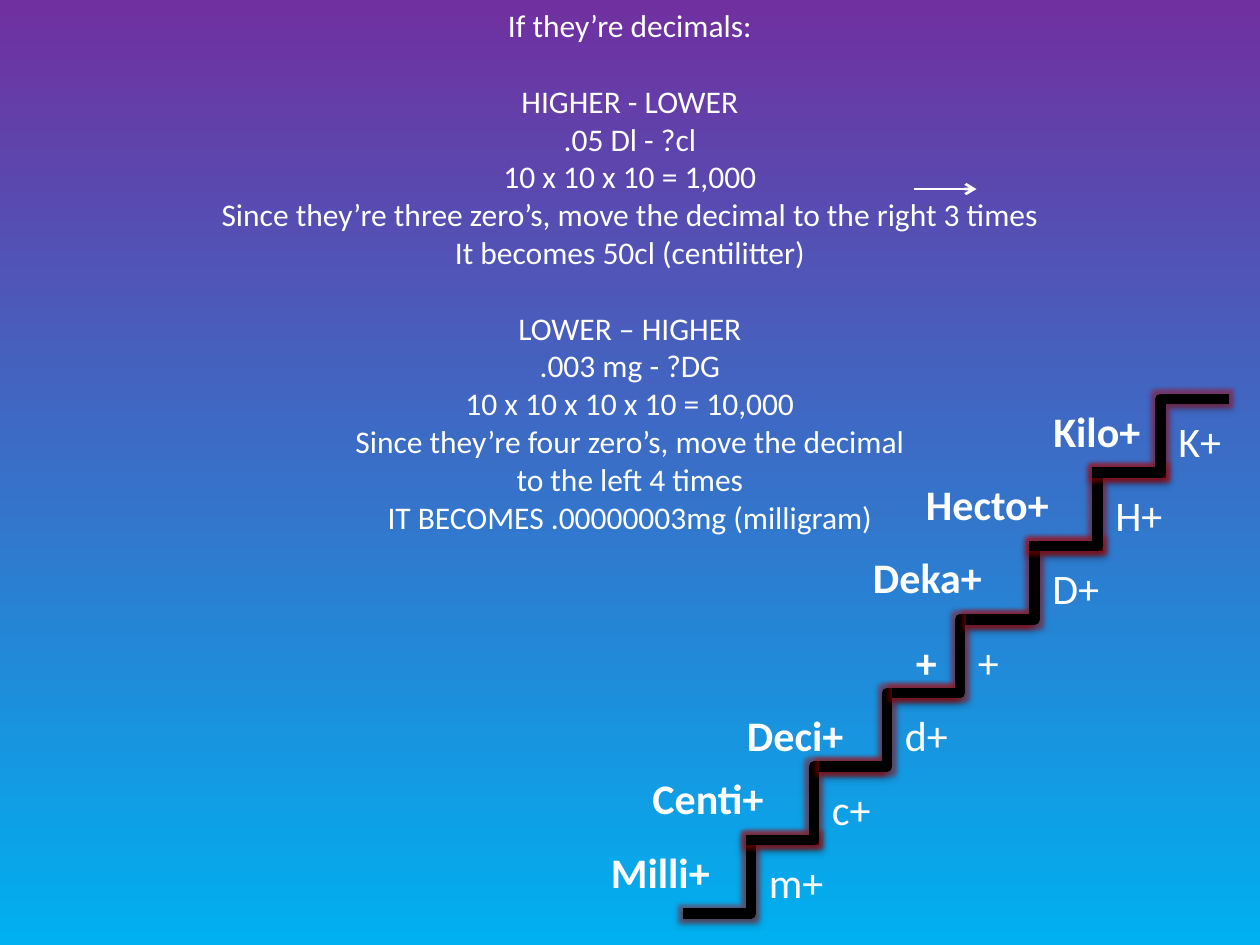
from dataclasses import dataclass

from lxml.etree import SubElement
from pptx import Presentation
from pptx.dml.color import RGBColor
from pptx.enum.shapes import MSO_CONNECTOR
from pptx.enum.text import MSO_AUTO_SIZE, PP_ALIGN
from pptx.oxml.ns import qn
from pptx.shapes.connector import Connector
from pptx.slide import Slide
from pptx.util import Inches, Pt

COLORS = {
    "top": "7030A0",
    "base": "00B0F0",
    "text": "FFFFFF",
    "stair": "000000",
    "glow": "C00000",
}
RUN, RISE = 1.08, 7 / 12
FLOOR = 7.25

NOTES = [
    [
        "If they’re decimals:",
    ],
    [
        "HIGHER - LOWER",
        ".05 Dl - ?cl",
        "10 x 10 x 10 = 1,000",
        "Since they’re three zero’s, move the decimal to the right 3 times",
        "It becomes 50cl (centilitter)",
    ],
    [
        "LOWER – HIGHER",
        ".003 mg - ?DG",
        "10 x 10 x 10 x 10 = 10,000",
        "Since they’re four zero’s, move the decimal",
        "to the left 4 times",
        "IT BECOMES .00000003mg (milligram)",
    ],
]


@dataclass
class Step:
    left: float
    name: str
    name_left: float
    name_top: float
    width: float
    short: str
    align: PP_ALIGN = PP_ALIGN.LEFT


STEPS = [
    Step(5.42, "Milli+", 4.75, 6.67, 1.08, "m+"),
    Step(5.92, "Centi+", 5.08, 6.08, 1.25, "c+"),
    Step(6.5, "Deci+", 5.83, 5.58, 1.08, "d+"),
    Step(7.08, "+", 7.17, 5, 0.33, "+"),
    Step(7.67, "Deka+", 6.83, 4.33, 1.25, "D+"),
    Step(8.17, "Hecto+", 7.25, 3.75, 1.42, "H+"),
    Step(8.67, "Kilo+", 8.08, 3.17, 1.25, "K+", PP_ALIGN.CENTER),
]


def color(key: str) -> RGBColor:
    return RGBColor.from_string(COLORS[key])


def write(slide: Slide, groups: list[list[str]], left: float, top: float,
          width: float, height: float, *, size: float = 24,
          bold: bool = False, align: PP_ALIGN = PP_ALIGN.LEFT,
          gap: float = 0) -> None:
    box = slide.shapes.add_textbox(
        Inches(left), Inches(top), Inches(width), Inches(height))
    frame = box.text_frame
    frame.word_wrap = True
    frame.auto_size = MSO_AUTO_SIZE.SHAPE_TO_FIT_TEXT
    para = frame.paragraphs[0]
    for i, group in enumerate(groups):
        for j, line in enumerate(group):
            if i or j:
                para = frame.add_paragraph()
            para.alignment = align
            para.space_before = Pt(gap if i and not j else 0)
            run = para.add_run()
            run.text = line
            run.font.name = "Calibri"
            run.font.size = Pt(size)
            run.font.bold = bold
            run.font.color.rgb = color("text")


def link(slide: Slide, kind: MSO_CONNECTOR, start: tuple[float, float],
         end: tuple[float, float], tint: str, weight: float) -> Connector:
    line = slide.shapes.add_connector(
        kind, *(Inches(v) for v in (*start, *end)))
    line.line.color.rgb = color(tint)
    line.line.width = Pt(weight)
    SubElement(line._element.spPr, qn("a:effectLst"))
    return line


def effect(line: Connector, tag: str, tint: str, alpha: int,
           **attrs: str) -> None:
    holder = line._element.spPr.find(qn("a:effectLst"))
    node = SubElement(holder, qn(tag), attrs)
    shade = SubElement(node, qn("a:srgbClr"), val=COLORS[tint])
    SubElement(shade, qn("a:alpha"), val=str(alpha * 1000))


def climb(slide: Slide, step: Step, level: int) -> None:
    low = FLOOR - level * RISE
    stair = link(slide, MSO_CONNECTOR.ELBOW, (step.left, low),
                 (step.left + RUN, low - RISE), "stair", 6)
    effect(stair, "a:glow", "glow", 40, rad=str(Pt(5)))
    effect(stair, "a:outerShdw", "stair", 35, blurRad=str(Pt(3.1)),
           dist=str(Pt(1.8)), dir="5400000", rotWithShape="0")


def label(slide: Slide, step: Step, level: int) -> None:
    write(slide, [[step.name]], step.name_left, step.name_top,
          step.width, 0.5, bold=True, align=step.align)
    write(slide, [[step.short]], step.left + RISE,
          FLOOR - 0.5 - level * RISE, 0.75, 0.5)


def main() -> None:
    deck = Presentation()
    deck.slide_width, deck.slide_height = Inches(10), Inches(7.5)
    slide = deck.slides.add_slide(deck.slide_layouts[6])

    fill = slide.background.fill
    fill.gradient()
    fill.gradient_angle = 270
    for stop, key in zip(fill.gradient_stops, ("top", "base")):
        stop.color.rgb = color(key)

    write(slide, NOTES, 0, 0, 10, 4.95, size=18,
          align=PP_ALIGN.CENTER, gap=21.6)
    for draw in (climb, label):
        for level, step in enumerate(STEPS):
            draw(slide, step, level)

    arrow = link(slide, MSO_CONNECTOR.STRAIGHT, (7.25, 1.5), (7.75, 1.5),
                 "text", 1.5)
    SubElement(arrow.line._get_or_add_ln(), qn("a:tailEnd"), type="arrow")
    deck.save("out.pptx")


if __name__ == "__main__":
    main()
